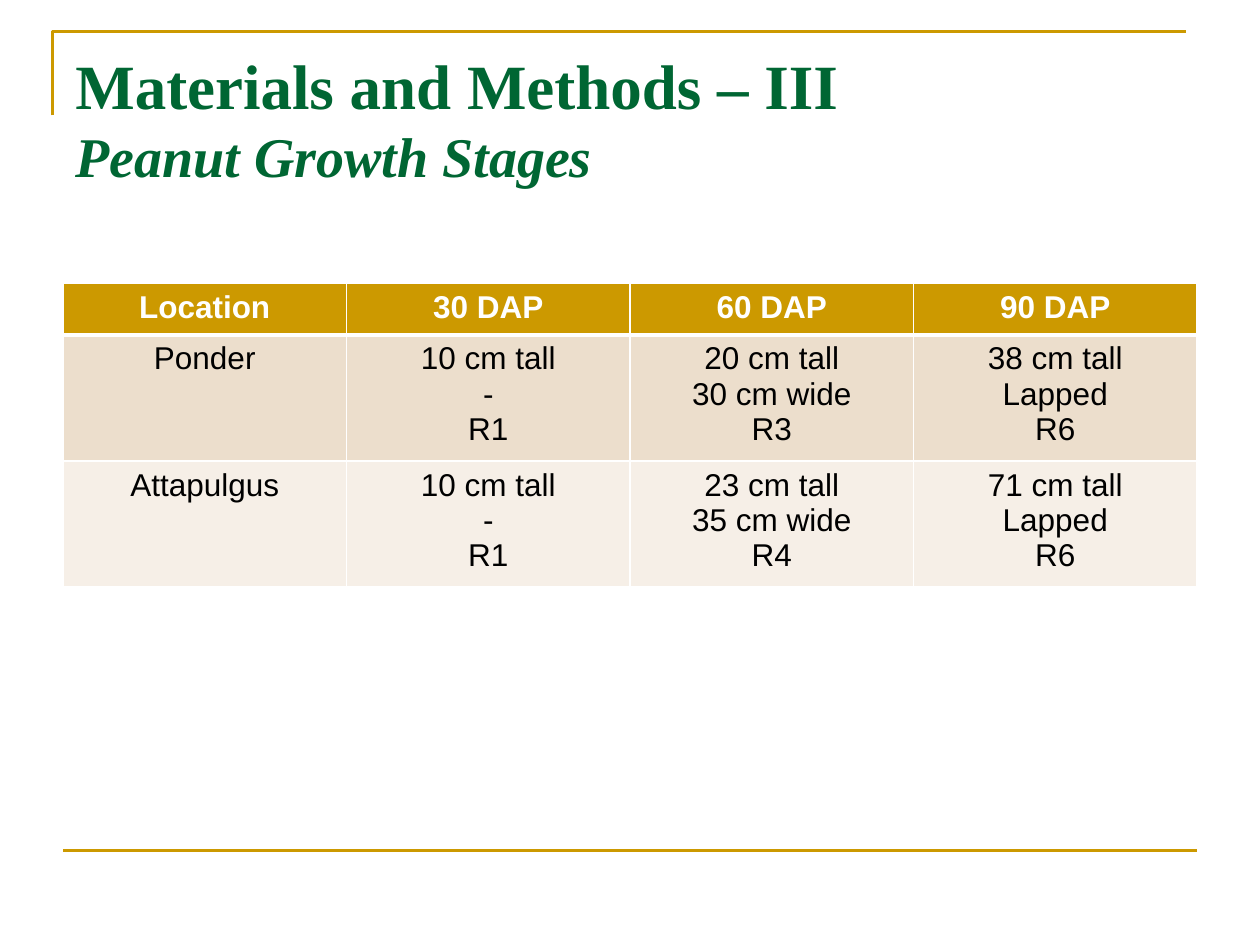
from lxml.etree import SubElement
from pptx import Presentation
from pptx.dml.color import RGBColor
from pptx.enum.text import MSO_ANCHOR, PP_ALIGN
from pptx.oxml.ns import qn
from pptx.util import Pt

GOLD, GREEN, WHITE, BLACK = "CC9900", "006633", "FFFFFF", "000000"
BODY_FILLS = ["ECDECC", "F6EFE7"]
MARGIN, CONTENT_WIDTH = 36, 648
HEADER_HEIGHT, STAGE_HEIGHT = 29.5, 67.5
GROWTH_STAGES = [
    ["Location", "30 DAP", "60 DAP", "90 DAP"],
    ["Ponder", "10 cm tall\n-\nR1", "20 cm tall\n30 cm wide\nR3", "38 cm tall\nLapped\nR6"],
    ["Attapulgus", "10 cm tall\n-\nR1", "23 cm tall\n35 cm wide\nR4", "71 cm tall\nLapped\nR6"],
]


def color(hex_value):
    return RGBColor.from_string(hex_value)


def format_font(font, hex_value, **values):
    for key, value in values.items():
        setattr(font, key, value)
    font.color.rgb = color(hex_value)


def style_rule(rule):
    rule.line.color.rgb = color(GOLD)
    rule.line.width = Pt(1.5)


def add_corner(slide):
    builder = slide.shapes.build_freeform(Pt(30), Pt(66), scale=1.0)
    builder.add_line_segments([(Pt(30), Pt(18)), (Pt(678), Pt(18))], close=False)
    corner = builder.convert_to_shape()
    corner.fill.background()
    corner.shadow.inherit = False
    style_rule(corner)


def add_footer_rule(slide):
    rule = slide.shapes.add_connector(1, Pt(MARGIN), Pt(486), Pt(MARGIN + CONTENT_WIDTH), Pt(486))
    style_rule(rule)
    SubElement(rule._element.spPr, qn("a:effectLst"))


def add_title(slide):
    frame = slide.shapes.add_textbox(Pt(MARGIN), Pt(21.6), Pt(CONTENT_WIDTH), Pt(90)).text_frame
    frame.word_wrap = True
    frame.vertical_anchor = MSO_ANCHOR.BOTTOM
    heading = frame.paragraphs[0]
    topic = heading.add_run()
    topic.text = "Materials and Methods – III"
    heading.add_line_break()
    subtopic = heading.add_run()
    subtopic.text = "Peanut Growth Stages"
    for run, size, italic in [(topic, 36, False), (subtopic, 32, True)]:
        format_font(run.font, GREEN, name="Times New Roman", size=Pt(size), bold=True, italic=italic)


def set_borders(cell, **widths):
    """Draw white cell borders; the fill must be set afterwards to keep the XML order."""
    properties = cell._tc.get_or_add_tcPr()
    for side, width in widths.items():
        border = SubElement(properties, qn(f"a:ln{side}"), w=str(Pt(width)))
        SubElement(SubElement(border, qn("a:solidFill")), qn("a:srgbClr"), val=WHITE)


def fill_cell(cell, text, row_index):
    is_header = row_index == 0
    set_borders(cell, L=1, R=1, T=3 if row_index == 1 else 1, B=3 if is_header else 1)
    cell.fill.solid()
    cell.fill.fore_color.rgb = color(GOLD if is_header else BODY_FILLS[row_index - 1])
    cell.text = text
    for paragraph in cell.text_frame.paragraphs:
        paragraph.alignment = PP_ALIGN.CENTER
        format_font(paragraph.runs[0].font, WHITE if is_header else BLACK,
                    name="Arial", size=Pt(18), bold=is_header)


def add_stage_table(slide):
    heights = [HEADER_HEIGHT, STAGE_HEIGHT, STAGE_HEIGHT]
    table = slide.shapes.add_table(len(GROWTH_STAGES), len(GROWTH_STAGES[0]), Pt(MARGIN), Pt(162),
                                   Pt(CONTENT_WIDTH), Pt(sum(heights))).table
    for row_index, (texts, height) in enumerate(zip(GROWTH_STAGES, heights)):
        table.rows[row_index].height = Pt(height)
        for column_index, text in enumerate(texts):
            fill_cell(table.cell(row_index, column_index), text, row_index)


def main():
    presentation = Presentation()
    presentation.slide_width, presentation.slide_height = Pt(720), Pt(540)
    slide = presentation.slides.add_slide(presentation.slide_layouts[6])
    add_corner(slide)
    add_footer_rule(slide)
    add_title(slide)
    add_stage_table(slide)
    presentation.save("out.pptx")


if __name__ == "__main__":
    main()
